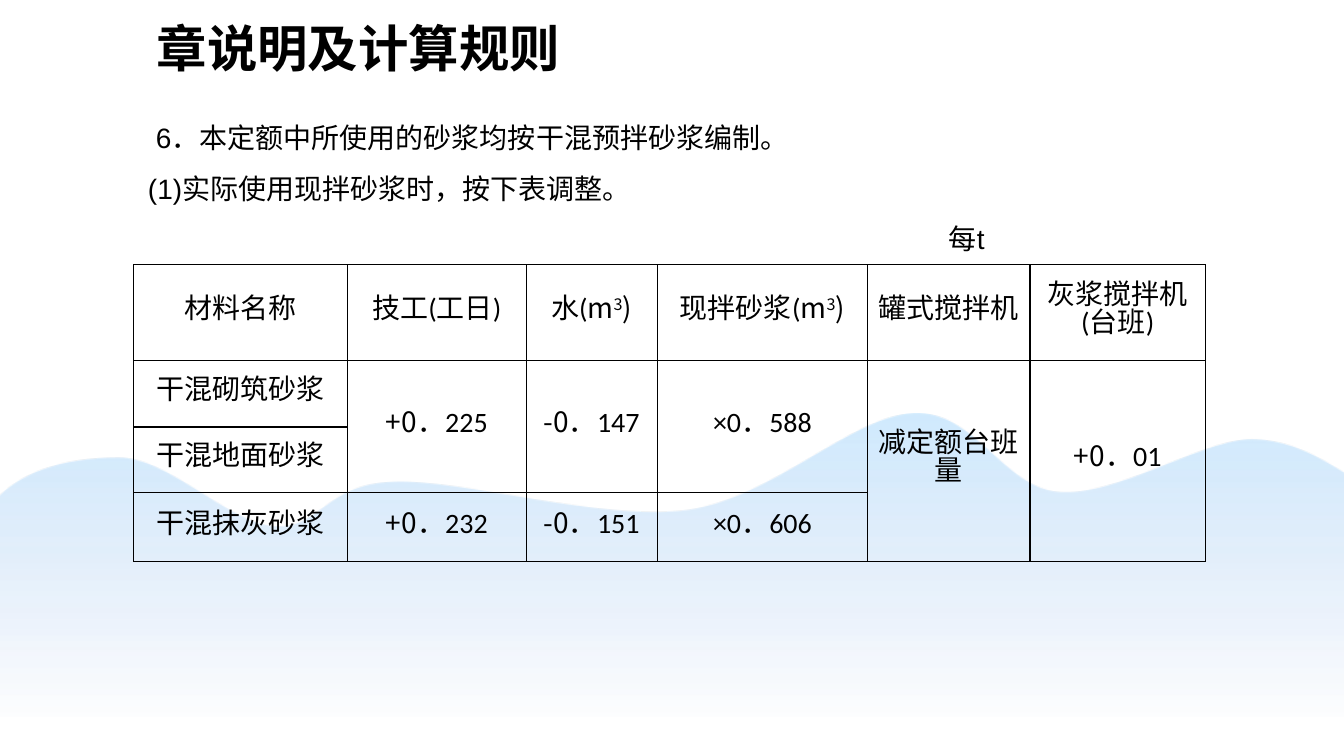
from lxml import etree
from pptx import Presentation
from pptx.dml.color import RGBColor
from pptx.enum.text import MSO_ANCHOR, PP_ALIGN
from pptx.oxml import parse_xml
from pptx.oxml.ns import nsdecls, qn
from pptx.util import Cm, Pt

CENTER, LEFT = PP_ALIGN.CENTER, PP_ALIGN.LEFT
MIDDLE = MSO_ANCHOR.MIDDLE
HEADING, LATIN, CJK = "Arial", "Calibri", "Noto Sans CJK SC"
BLACK = "000000"

TITLE = "章说明及计算规则"
NOTES = [
    (1.57, "6．本定额中所使用的砂浆均按干混预拌砂浆编制。"),
    (1.37, "(1)实际使用现拌砂浆时，按下表调整。"),
    (21.55, "每t"),
]

CUBIC_METRE = [("m", CJK, 0), ("3", CJK, 30), (")", CJK, 0)]


def plain(text):
    return [(text, LATIN, 0)]


def signed(sign, decimals):
    return [(sign + "0", CJK, 0), ("．" + decimals, LATIN, 0)]


ROWS = [
    [[plain("材料名称")], [plain("技工(工日)")], [plain("水(") + CUBIC_METRE],
     [plain("现拌砂浆(") + CUBIC_METRE], [plain("罐式搅拌机")],
     [plain("灰浆搅拌机"), plain("(台班)")]],
    [[plain("干混砌筑砂浆")], [signed("+", "225")], [signed("-", "147")],
     [plain("×0．588")], [plain("减定额台班量")], [signed("+", "01")]],
    [[plain("干混地面砂浆")]],
    [[plain("干混抹灰砂浆")], [signed("+", "232")], [signed("-", "151")],
     [plain("×0．606")]],
]
COLUMN_WIDTHS = [5.39, 4.5, 3.3, 5.31, 4.09, 4.42]
ROW_HEIGHTS = [2.41, 1.68, 1.66, 1.73]
LAST_MERGED_ROW = {1: 2, 2: 2, 3: 2, 4: 3, 5: 3}

UNIT = Cm(2.54)
WAVE_LEFT, WAVE_TOP, WAVE_WIDTH, WAVE_HEIGHT = -0.8, 4.1, 14.72, 4.28
WAVE_START = (-0.23, 5.26)
WAVE_CURVES = [
    ((0, 4.67), (0.67, 4.54), (1.17, 4.54)),
    ((1.66, 4.53), (2.26, 5.18), (2.71, 5.22)),
    ((3.17, 5.26), (3.22, 4.8), (3.9, 4.78)),
    ((4.58, 4.75), (5.95, 5.17), (6.81, 5.06)),
    ((7.67, 4.94), (8.44, 4.13), (9.06, 4.1)),
    ((9.67, 4.07), (9.95, 4.84), (10.5, 4.88)),
    ((11.05, 4.93), (11.88, 4.39), (12.37, 4.36)),
    ((12.85, 4.34), (13.25, 4.65), (13.43, 4.75)),
    ((13.61, 4.85), (13.44, 4.42), (13.43, 4.98)),
    ((13.43, 5.53), (14.56, 7.52), (13.39, 8.07)),
    ((12.23, 8.62), (8.71, 8.26), (6.43, 8.26)),
    ((4.16, 8.26), (0.85, 8.57), (-0.26, 8.07)),
    ((-1.37, 7.57), (-0.47, 5.85), (-0.23, 5.26)),
]
WAVE_STOPS = [(0, "2CA2FA", 22), (71, "064EC4", 0)]


def color(value):
    return RGBColor.from_string(value)


def style(para, size, name, bold=False, align=LEFT, spacing=1.0):
    para.alignment = align
    para.line_spacing = spacing
    para.font.size = Pt(size)
    para.font.name = name
    para.font.bold = bold
    para.font.color.rgb = color(BLACK)


def add_box(page, left, top, width, height, wrap):
    box = page.shapes.add_textbox(Cm(left), Cm(top), Cm(width), Cm(height))
    box.text_frame.word_wrap = wrap
    return box.text_frame


def emu(length):
    return round(length * UNIT)


def add_points(parent, points):
    for x, y in points:
        etree.SubElement(parent, qn("a:pt"),
                         x=str(emu(x - WAVE_LEFT)), y=str(emu(y - WAVE_TOP)))


def bend_outline(wave):
    wave.left, wave.top = emu(WAVE_LEFT), emu(WAVE_TOP)
    wave.width, wave.height = emu(WAVE_WIDTH), emu(WAVE_HEIGHT)
    outline = next(wave.element.iter(qn("a:path")))
    outline.set("w", str(wave.width))
    outline.set("h", str(wave.height))
    for step in list(outline):
        outline.remove(step)
    add_points(etree.SubElement(outline, qn("a:moveTo")), [WAVE_START])
    for curve in WAVE_CURVES:
        add_points(etree.SubElement(outline, qn("a:cubicBezTo")), curve)
    etree.SubElement(outline, qn("a:close"))


def add_wave(page):
    builder = page.shapes.build_freeform(*map(emu, WAVE_START))
    builder.add_line_segments([tuple(map(emu, curve[-1])) for curve in WAVE_CURVES])
    wave = builder.convert_to_shape()
    bend_outline(wave)
    wave.shadow.inherit = False
    wave.line.fill.background()
    wave.fill.gradient()
    stops = "".join(
        f'<a:gs pos="{place * 1000}"><a:srgbClr val="{tint}">'
        f'<a:alpha val="{alpha * 1000}"/></a:srgbClr></a:gs>'
        for place, tint, alpha in WAVE_STOPS)
    gradient = parse_xml(f'<a:gradFill {nsdecls("a")} rotWithShape="1"><a:gsLst>{stops}'
                         '</a:gsLst><a:lin ang="5400000" scaled="0"/></a:gradFill>')
    properties = wave.element.spPr
    properties.replace(properties.find(qn("a:gradFill")), gradient)


def add_borders(cell):
    properties = cell._tc.get_or_add_tcPr()
    for side in ("lnL", "lnR", "lnT", "lnB"):
        line = etree.SubElement(properties, qn(f"a:{side}"), w=str(Pt(1)))
        fill = etree.SubElement(line, qn("a:solidFill"))
        etree.SubElement(fill, qn("a:srgbClr"), val=BLACK)


def fill_cell(cell, lines):
    frame = cell.text_frame
    for index, line in enumerate(lines):
        para = frame.add_paragraph() if index else frame.paragraphs[0]
        style(para, 20, LATIN, align=CENTER, spacing=Pt(20))
        for text, name, raised in line:
            span = para.add_run()
            span.text = text
            span.font.name = name
            if raised:
                span._r.get_or_add_rPr().set("baseline", str(raised * 1000))


def add_adjustments(page):
    table = page.shapes.add_table(
        len(ROWS), len(COLUMN_WIDTHS), Cm(3.37), Cm(6.67),
        Cm(sum(COLUMN_WIDTHS)), Cm(sum(ROW_HEIGHTS))).table
    table.first_row = table.horz_banding = False
    for column, width in zip(table.columns, COLUMN_WIDTHS):
        column.width = Cm(width)
    for row, height in zip(table.rows, ROW_HEIGHTS):
        row.height = Cm(height)
    for cell in table.iter_cells():
        add_borders(cell)
        cell.fill.background()
        cell.vertical_anchor = MIDDLE
        cell.margin_left = cell.margin_right = cell.margin_top = cell.margin_bottom = 0
    for column, last_row in LAST_MERGED_ROW.items():
        table.cell(1, column).merge(table.cell(last_row, column))
    for row, cells in enumerate(ROWS):
        for column, lines in enumerate(cells):
            fill_cell(table.cell(row, column), lines)


def main():
    deck = Presentation()
    deck.slide_width, deck.slide_height = Cm(33.87), Cm(19.05)
    page = deck.slides.add_slide(deck.slide_layouts[6])
    page.background.fill.solid()
    page.background.fill.fore_color.rgb = color("FFFFFF")

    add_wave(page)

    title = add_box(page, 3.7, 0.3, 10.82, 1.8, False).paragraphs[0]
    title.text = TITLE
    style(title, 36, HEADING, bold=True)

    notes = add_box(page, 2.11, 2.5, 29.36, 4.2, True)
    for index, (indent, text) in enumerate(NOTES):
        para = notes.add_paragraph() if index else notes.paragraphs[0]
        para.text = text
        style(para, 20, HEADING, spacing=1.5)
        para._p.get_or_add_pPr().set("marL", str(Cm(indent)))

    add_adjustments(page)
    deck.save("out.pptx")


if __name__ == "__main__":
    main()
